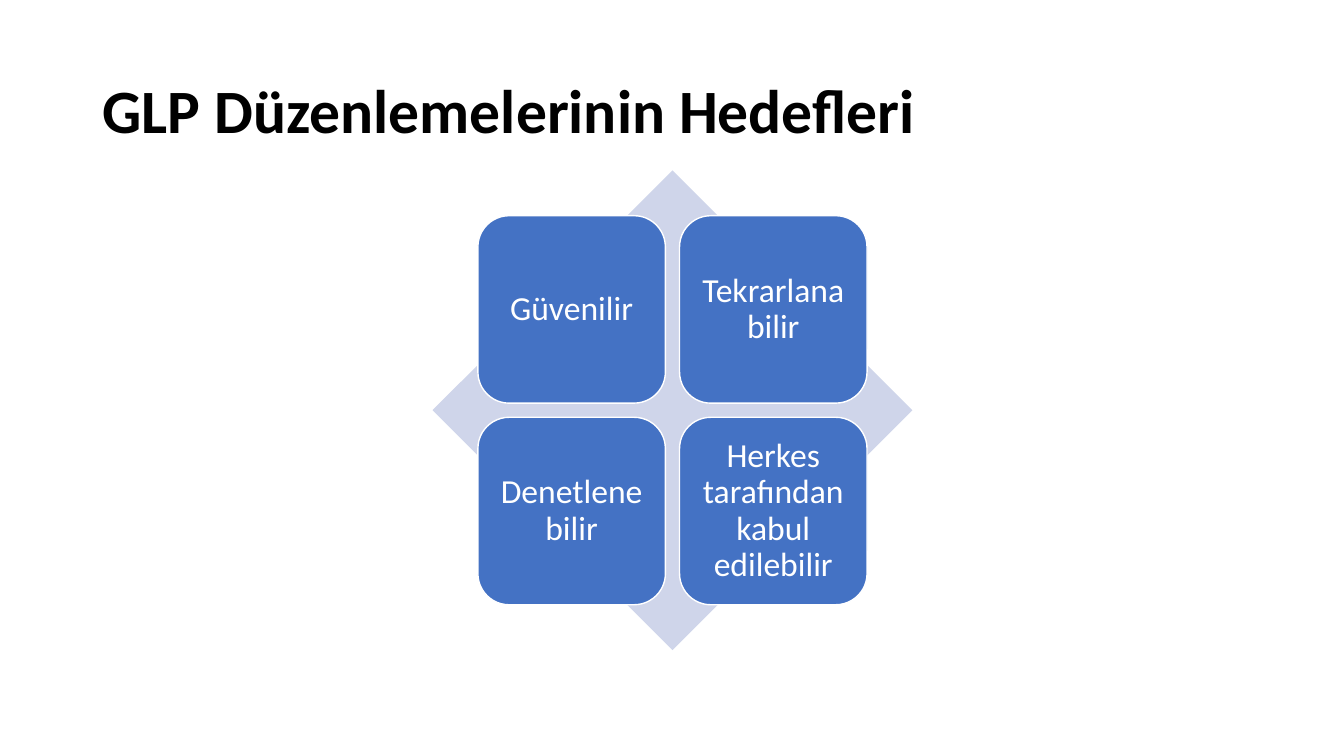
from itertools import product

from pptx import Presentation
from pptx.dml.color import RGBColor as Rgb
from pptx.enum.shapes import MSO_SHAPE as Form
from pptx.enum.text import MSO_ANCHOR as Anchor, PP_ALIGN as Align
from pptx.util import Pt

PX = 9144
HUES = {"title": "000000", "back": "CFD5EA", "tile": "4472C4", "light": "FFFFFF"}
TITLE = "GLP Düzenlemelerinin Hedefleri"
GOALS = [
    "Güvenilir",
    "Tekrarlanabilir",
    "Denetlenebilir",
    "Herkes tarafından kabul edilebilir",
]
LEFT, TOP, SIDE, STEP = 474, 214, 186, 200


def hue(name):
    """Return the named colour."""
    return Rgb.from_string(HUES[name])


def apply(item, style):
    """Set each attribute in style on item."""
    for key, value in style.items():
        setattr(item, key, value)


def write(shape, text, size, color, align, pad, bold=False):
    """Fill a shape with one middle-anchored paragraph."""
    frame = shape.text_frame
    apply(frame, {
        "word_wrap": True,
        "vertical_anchor": Anchor.MIDDLE,
        "margin_left": 10 * PX,
        "margin_right": 10 * PX,
        "margin_top": pad * PX,
        "margin_bottom": pad * PX,
    })
    para = frame.paragraphs[0]
    apply(para, {"text": text, "alignment": align, "line_spacing": 0.9})
    font = para.runs[0].font
    apply(font, {"name": "Calibri", "size": Pt(size), "bold": bold})
    font.color.rgb = hue(color)


def add_form(slide, form, box, fill):
    """Add a flat filled shape without an outline."""
    shape = slide.shapes.add_shape(form, *(n * PX for n in box))
    shape.shadow.inherit = False
    shape.fill.solid()
    shape.fill.fore_color.rgb = hue(fill)
    shape.line.fill.background()
    return shape


def add_title(slide, text, box):
    """Add the bold heading."""
    title = slide.shapes.add_textbox(*(n * PX for n in box))
    write(title, text, 44, "title", Align.LEFT, 5, bold=True)


def add_tile(slide, text, left, top):
    """Add one rounded tile with a white edge and its goal."""
    tile = add_form(slide, Form.ROUNDED_RECTANGLE, (left, top, SIDE, SIDE), "tile")
    tile.line.color.rgb = hue("light")
    tile.line.width = Pt(1)
    write(tile, text, 24, "light", Align.CENTER, 10)


def main():
    """Build the slide and save it."""
    deck = Presentation()
    apply(deck, {"slide_width": 1333 * PX, "slide_height": 750 * PX})
    slide = deck.slides.add_slide(deck.slide_layouts[6])
    add_title(slide, TITLE, (92, 40, 1150, 145))
    add_form(slide, Form.DIAMOND, (429, 169, 476, 476), "back")
    for goal, (row, col) in zip(GOALS, product(range(2), repeat=2)):
        add_tile(slide, goal, LEFT + col * STEP, TOP + row * STEP)
    deck.save("out.pptx")


if __name__ == "__main__":
    main()
